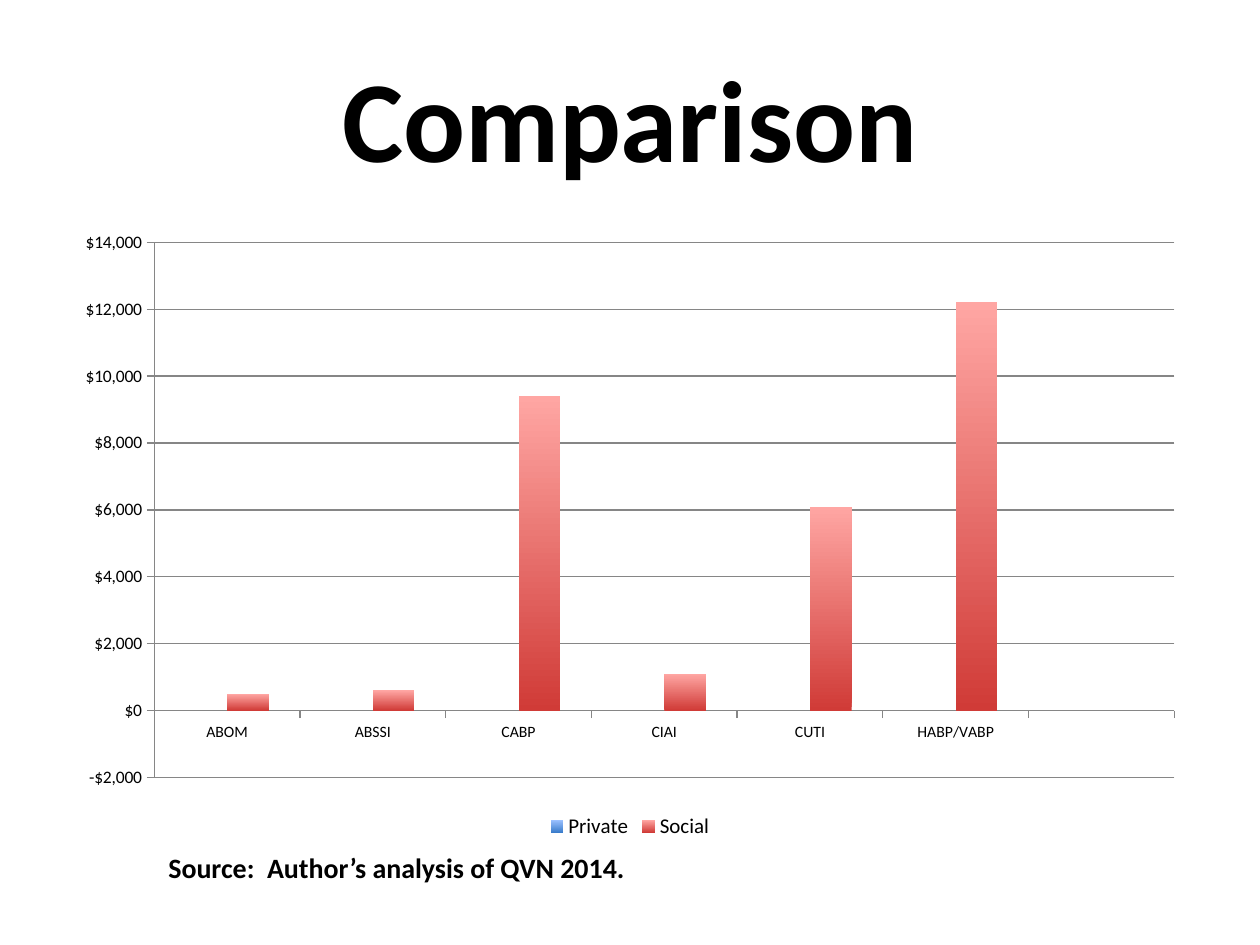
import pptx
import pptx.chart.data
import pptx.dml.color
import pptx.enum.chart
import pptx.enum.text
import pptx.util

RGBColor = pptx.dml.color.RGBColor
PX_PER_INCH = 126
FONT = "Calibri"
BLACK = RGBColor(0x00, 0x00, 0x00)
GRAY = RGBColor(0x86, 0x86, 0x86)
BLUE_DARK = RGBColor(0x3A, 0x7C, 0xCB)
BLUE_LIGHT = RGBColor(0x9B, 0xC1, 0xFF)
RED_DARK = RGBColor(0xD0, 0x3B, 0x37)
RED_LIGHT = RGBColor(0xFF, 0xA6, 0xA3)

# The last category is an unnamed, empty slot.
CATEGORIES = ["ABOM", "ABSSI", "CABP", "CIAI", "CUTI", "HABP/VABP", ""]
PRIVATE = [0] * len(CATEGORIES)
SOCIAL = [500, 600, 9400, 1100, 6100, 12200, None]


def px(length):
    return pptx.util.Emu(round(length * pptx.util.Inches(1) / PX_PER_INCH))


def style_font(font, size):
    font.name = FONT
    font.size = pptx.util.Pt(size)
    font.color.rgb = BLACK


def add_bold_text(slide, text, box, size, align, anchor):
    frame = slide.shapes.add_textbox(*map(px, box)).text_frame
    frame.word_wrap = True
    frame.vertical_anchor = anchor
    paragraph = frame.paragraphs[0]
    paragraph.alignment = align
    run = paragraph.add_run()
    run.text = text
    style_font(run.font, size)
    run.font.bold = True


def style_axis(axis, label_size):
    axis.major_tick_mark = pptx.enum.chart.XL_TICK_MARK.OUTSIDE
    axis.minor_tick_mark = pptx.enum.chart.XL_TICK_MARK.NONE
    style_font(axis.tick_labels.font, label_size)
    axis.format.line.color.rgb = GRAY


def fill_upward(series, bottom, top):
    """Shade the columns from the bottom colour to the top colour."""
    fill = series.format.fill
    fill.gradient()
    fill.gradient_angle = 90
    for stop, color, position in zip(fill.gradient_stops, (bottom, top), (0, 1)):
        stop.color.rgb = color
        stop.position = position


def add_cost_chart(slide, box):
    costs = pptx.chart.data.CategoryChartData()
    costs.categories = CATEGORIES
    costs.add_series("Private", PRIVATE)
    costs.add_series("Social", SOCIAL)
    chart = slide.shapes.add_chart(
        pptx.enum.chart.XL_CHART_TYPE.COLUMN_CLUSTERED, *map(px, box), costs
    ).chart
    style_font(chart.font, 18)
    chart.has_title = False

    chart.has_legend = True
    chart.legend.position = pptx.enum.chart.XL_LEGEND_POSITION.BOTTOM
    chart.legend.include_in_layout = False
    style_font(chart.legend.font, 12)

    style_axis(chart.category_axis, 9)
    dollars = chart.value_axis
    style_axis(dollars, 10)
    dollars.minimum_scale, dollars.maximum_scale = -2000, 14000
    dollars.major_unit = 2000
    dollars.tick_labels.number_format = '"$"#,##0'
    dollars.tick_labels.number_format_is_linked = False
    dollars.has_major_gridlines = True
    dollars.major_gridlines.format.line.color.rgb = GRAY

    plot = chart.plots[0]
    plot.gap_width = 150
    plot.overlap = 0
    plot.vary_by_categories = False
    private, social = plot.series
    fill_upward(private, BLUE_DARK, BLUE_LIGHT)
    fill_upward(social, RED_DARK, RED_LIGHT)


def main():
    presentation = pptx.Presentation()
    presentation.slide_width = px(1260)
    presentation.slide_height = px(945)
    slide = presentation.slides.add_slide(presentation.slide_layouts[6])

    align = pptx.enum.text.PP_ALIGN
    anchor = pptx.enum.text.MSO_ANCHOR
    add_bold_text(slide, "Comparison", (63, 37, 1134, 158), 66,
                  align.CENTER, anchor.MIDDLE)
    add_cost_chart(slide, (63, 220, 1134, 624))
    add_bold_text(slide, "Source:  Author’s analysis of QVN 2014.",
                  (156, 844, 794, 47), 16, align.LEFT, anchor.TOP)
    presentation.save("out.pptx")


if __name__ == "__main__":
    main()
